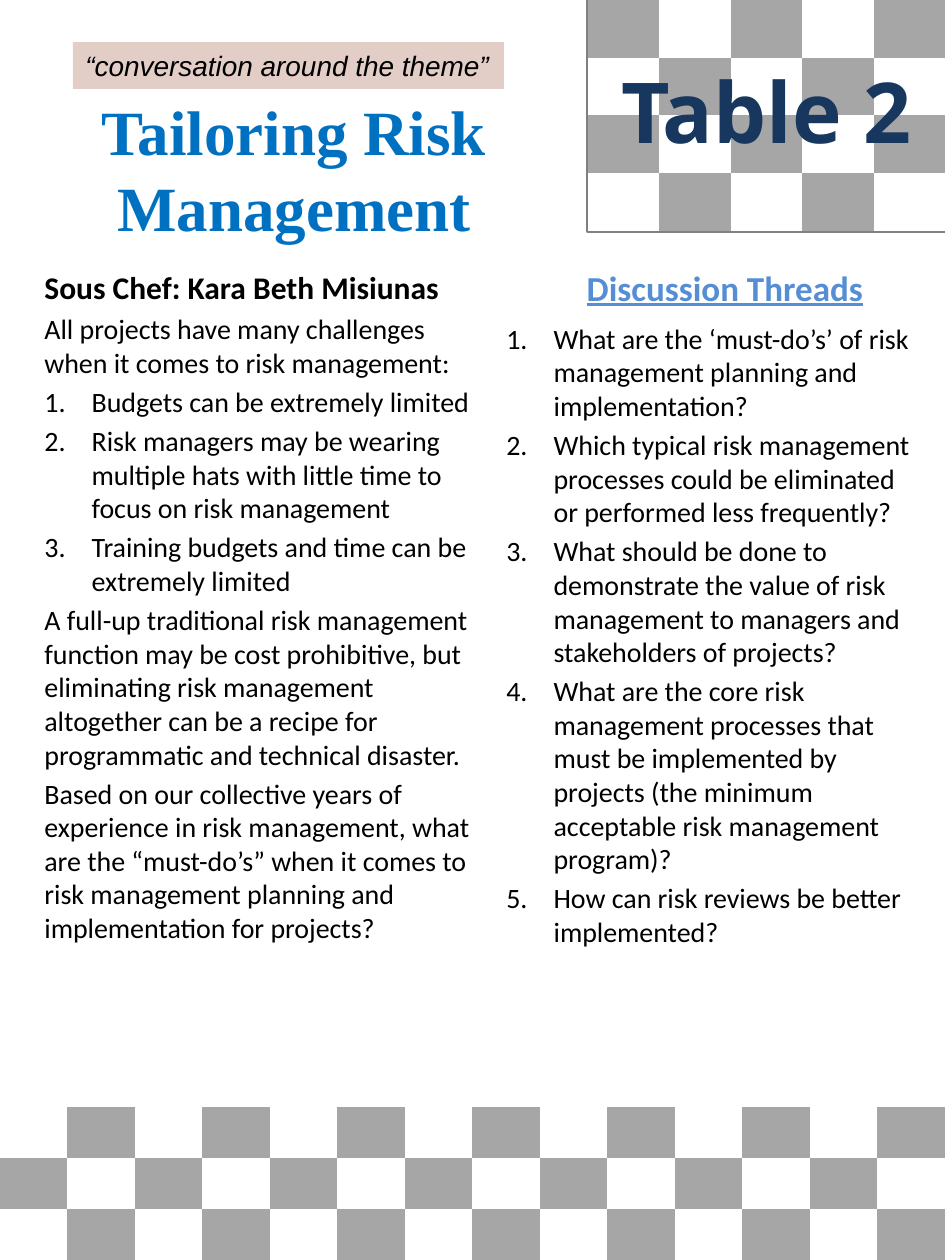
"""Build the Table 2 discussion sheet on tailoring risk management."""
from lxml.etree import SubElement
from pptx import Presentation
from pptx.dml.color import RGBColor as RGB
from pptx.enum.shapes import MSO_SHAPE as SHAPE
from pptx.enum.text import MSO_ANCHOR as ANCHOR, PP_ALIGN as ALIGN
from pptx.oxml.ns import qn
from pptx.util import Emu, Pt

COLORS = {"white": "FFFFFF", "check": "A6A6A6", "frame": "808080", "black": "000000",
          "navy": "17375E", "blue": "0070C0", "sky": "558ED5", "blush": "E3CDC7"}
NO_STYLE = "{2D5ABB26-0587-4C30-8999-92F81FD0307C}"


def px(*lengths):
    return [Emu(round(length * 914400 / 126)) for length in lengths]


def add_text(box, lines, fill=None, anchor=ANCHOR.TOP):
    area = slide.shapes.add_textbox(*px(*box))
    if fill:
        area.fill.solid()
        area.fill.fore_color.rgb = RGB.from_string(COLORS[fill])
    frame = area.text_frame
    frame.word_wrap = True
    frame.vertical_anchor = anchor
    for i, (text, size, face, color, look) in enumerate(lines):
        line = frame.paragraphs[0] if i == 0 else frame.add_paragraph()
        line.text = text
        line.font.size, line.font.name = Pt(size), face
        line.font.color.rgb = RGB.from_string(COLORS[color])
        line.font.bold = "bold" in look
        line.font.italic = "italic" in look
        line.font.underline = "underline" in look
        line.alignment = ALIGN.CENTER if "center" in look else ALIGN.LEFT
        if "spaced" in look:
            line.space_before = Pt(size * 0.2)
        if "number" in look:
            props = line._p.get_or_add_pPr()
            props.set("marL", str(Pt(27)))
            props.set("indent", str(-Pt(27)))
            SubElement(props, qn("a:buFont"), typeface="+mj-lt")
            SubElement(props, qn("a:buAutoNum"), type="arabicPeriod")


prs = Presentation()
prs.slide_width, prs.slide_height = px(945, 1260)
slide = prs.slides.add_slide(prs.slide_layouts[6])

corner = slide.shapes.add_shape(SHAPE.RECTANGLE, *px(588, 0, 357, 231))
corner.shadow.inherit = False
corner.fill.solid()
corner.fill.fore_color.rgb = RGB.from_string(COLORS["white"])
corner.line.color.rgb = RGB.from_string(COLORS["frame"])
corner.line.width = Pt(2.5)

# rows, columns, box, parity of the gray squares
for rows, cols, box, gray in [(4, 5, (588, 0, 357, 231), 0),
                              (3, 14, (0, 1107, 945, 153), 1)]:
    board = slide.shapes.add_table(rows, cols, *px(*box)).table
    board.first_row = board.horz_banding = False
    board._tbl.tblPr.find(qn("a:tableStyleId")).text = NO_STYLE
    for r in range(rows):
        for c in range(cols):
            square = board.cell(r, c)
            square.margin_top = square.margin_bottom = 0
            square.fill.solid()
            tone = "check" if (r + c) % 2 == gray else "white"
            square.fill.fore_color.rgb = RGB.from_string(COLORS[tone])

threads = [
    "What are the ‘must-do’s’ of risk management planning and implementation?",
    "Which typical risk management processes could be eliminated or performed less frequently?",
    "What should be done to demonstrate the value of risk management to managers and "
    "stakeholders of projects?",
    "What are the core risk management processes that must be implemented by projects "
    "(the minimum acceptable risk management program)?",
    "How can risk reviews be better implemented?",
]
add_text((494, 315, 431, 766),
         [(thread, 16, "Calibri", "black", "spaced number") for thread in threads])

background = [
    ("All projects have many challenges when it comes to risk management:", "spaced"),
    ("Budgets can be extremely limited", "spaced number"),
    ("Risk managers may be wearing multiple hats with little time to focus on risk management",
     "spaced number"),
    ("Training budgets and time can be extremely limited", "spaced number"),
    ("A full-up traditional risk management function may be cost prohibitive, but eliminating "
     "risk management altogether can be a recipe for programmatic and technical disaster.",
     "spaced"),
    ("Based on our collective years of experience in risk management, what are the "
     "“must-do’s” when it comes to risk management planning and implementation for projects?",
     "spaced"),
]
add_text((32, 262, 462, 839),
         [("Sous Chef: Kara Beth Misiunas", 18, "Calibri", "black", "bold spaced")]
         + [(text, 16, "Calibri", "black", look) for text, look in background], "white")

add_text((588, 53, 357, 115), [("Table 2", 48, "Open Sans", "navy", "bold center")])
add_text((0, 95, 588, 147),
         [("Tailoring Risk Management", 36, "Times New Roman", "blue", "bold center")],
         anchor=ANCHOR.MIDDLE)
add_text((431, 260, 588, 55),
         [("Discussion Threads", 20, "Calibri", "sky", "bold underline center")])
add_text((73, 42, 431, 47),
         [("“conversation around the theme”", 16, "Arial", "black", "italic")], "blush")

prs.save("out.pptx")
